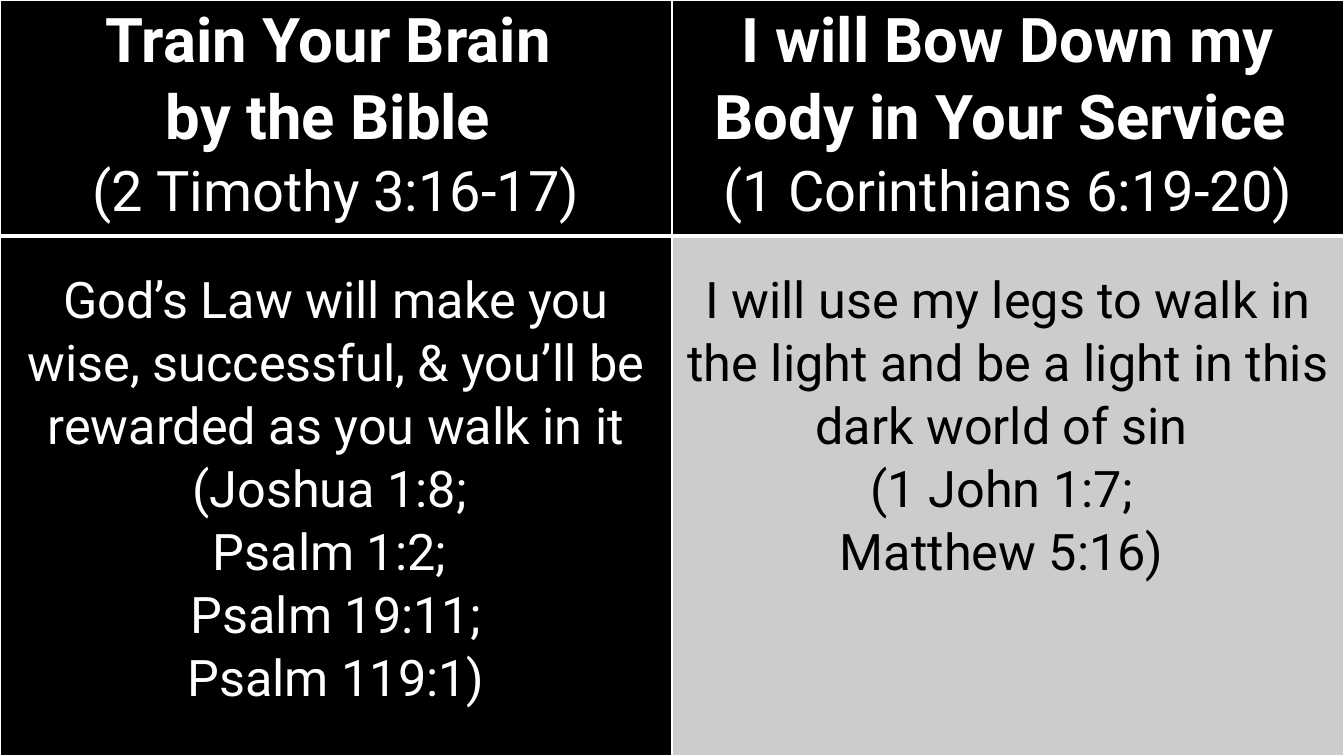
import pptx
import pptx.dml.color
import pptx.enum.text
import pptx.oxml
import pptx.oxml.ns
import pptx.util
from dataclasses import dataclass

HEADINGS = [
    (["Train Your Brain ", "by the Bible "], "(2 Timothy 3:16-17)"),
    (["I will Bow Down my Body in Your Service "], "(1 Corinthians 6:19-20)"),
]
LESSONS = [
    [
        "God’s Law will make you wise, successful, & you’ll be rewarded as you walk in it (Joshua 1:8; ",
        "Psalm 1:2; ",
        "Psalm 19:11;",
        "Psalm 119:1)",
    ],
    [
        "I will use my legs to walk in the light and be a light in this dark world of sin ",
        "(1 John 1:7; ",
        "Matthew 5:16) ",
    ],
]


@dataclass(frozen=True)
class Theme:
    font: str = "Roboto"
    black: str = "000000"
    white: str = "FFFFFF"
    grey: str = "CCCCCC"
    heading_size: int = 44
    verse_size: int = 40
    lesson_size: int = 36
    line_spacing: float = 1.07
    thin_border: int = 1
    thick_border: int = 3


THEME = Theme()
Cm = pptx.util.Cm
WIDTH, HEIGHT = 33.87, 19.05
HEADING_HEIGHT = 5.94
SIDE_MARGIN = 0.18
LESSON_TOP = 0.8


def rgb(value):
    return pptx.dml.color.RGBColor.from_string(value)


def set_borders(cell, bottom_width):
    properties = cell._tc.get_or_add_tcPr()
    widths = {"L": THEME.thin_border, "R": THEME.thin_border, "T": THEME.thin_border, "B": bottom_width}
    for position, (side, width) in enumerate(widths.items()):
        border = pptx.oxml.parse_xml(
            f'<a:ln{side} {pptx.oxml.ns.nsdecls("a")} w="{pptx.util.Pt(width)}">'
            f'<a:solidFill><a:srgbClr val="{THEME.white}"/></a:solidFill></a:ln{side}>'
        )
        properties.insert(position, border)


def fill_cell(cell, lines, fill, color, bottom_width, top_margin=0):
    cell.margin_left = cell.margin_right = Cm(SIDE_MARGIN)
    cell.margin_top, cell.margin_bottom = Cm(top_margin), Cm(0)
    cell.fill.solid()
    cell.fill.fore_color.rgb = rgb(fill)
    set_borders(cell, bottom_width)
    frame = cell.text_frame
    for index, (text, size, bold) in enumerate(lines):
        paragraph = frame.add_paragraph() if index else frame.paragraphs[0]
        paragraph.alignment = pptx.enum.text.PP_ALIGN.CENTER
        paragraph.line_spacing = THEME.line_spacing
        run = paragraph.add_run()
        run.text = text
        run.font.name = THEME.font
        run.font.size = pptx.util.Pt(size)
        run.font.bold = bold
        run.font.color.rgb = rgb(color)


def main():
    presentation = pptx.Presentation()
    presentation.slide_width, presentation.slide_height = Cm(WIDTH), Cm(HEIGHT)
    slide = presentation.slides.add_slide(presentation.slide_layouts[6])
    slide.background.fill.solid()
    slide.background.fill.fore_color.rgb = rgb(THEME.black)

    table = slide.shapes.add_table(2, len(HEADINGS), 0, 0, Cm(WIDTH), Cm(HEIGHT)).table
    table.first_row = table.horz_banding = False
    table.rows[0].height = Cm(HEADING_HEIGHT)
    table.rows[1].height = Cm(HEIGHT - HEADING_HEIGHT)

    lesson_colors = [(THEME.black, THEME.white), (THEME.grey, THEME.black)]
    for column, (title_lines, verse) in enumerate(HEADINGS):
        heading = [(line, THEME.heading_size, True) for line in title_lines]
        heading.append((verse, THEME.verse_size, False))
        fill_cell(table.cell(0, column), heading, THEME.black, THEME.white, THEME.thick_border)

        lesson = [(line, THEME.lesson_size, False) for line in LESSONS[column]]
        fill, color = lesson_colors[column]
        fill_cell(table.cell(1, column), lesson, fill, color, THEME.thin_border, LESSON_TOP)

    presentation.save("out.pptx")


if __name__ == "__main__":
    main()
